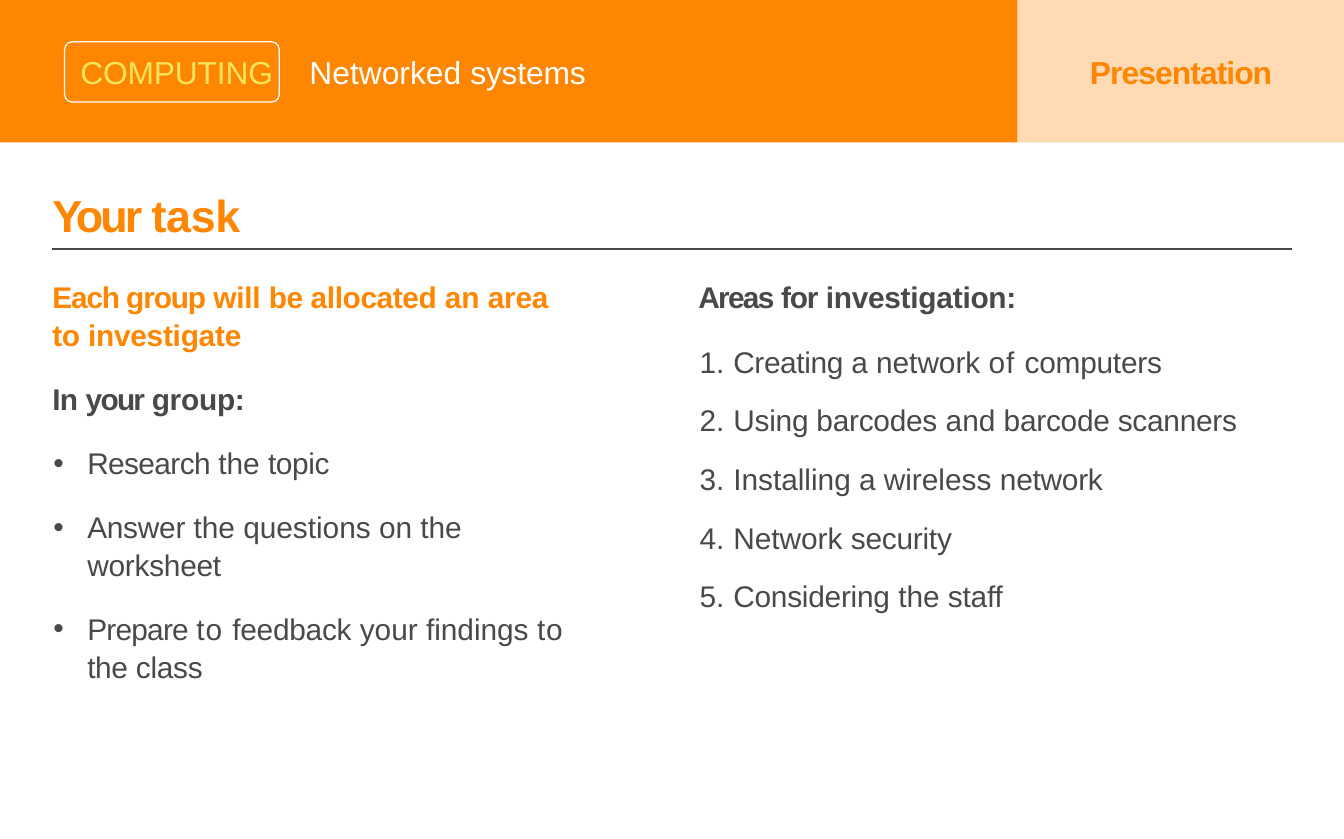
import pptx
import pptx.dml.color
import pptx.enum.shapes
import pptx.enum.text
import pptx.oxml
import pptx.oxml.ns
import pptx.util
from pptx.util import Cm

ORANGE, GREY, WHITE, YELLOW = "FF8600", "4A494A", "FFFFFF", "F2E55B"
SHAPE = pptx.enum.shapes.MSO_SHAPE


def color(value):
    """Return an RGB colour from a hex string."""
    return pptx.dml.color.RGBColor.from_string(value)


def add_xml(parent, tag, **attrs):
    """Append a DrawingML child element with attributes."""
    child = pptx.oxml.parse_xml(f"<a:{tag} {pptx.oxml.ns.nsdecls('a')}/>")
    for name, value in attrs.items():
        child.set(name, str(value))
    parent.append(child)
    return child


def add_panel(s, left, width, fill, alpha=None):
    """Add a band of the header, optionally translucent."""
    sp = s.shapes.add_shape(SHAPE.RECTANGLE, left, 0, width, Cm(2.69))
    sp.shadow.inherit = False
    sp.line.fill.background()
    sp.fill.solid()
    sp.fill.fore_color.rgb = color(fill)
    if alpha:
        clr = sp.fill._xPr.find(".//" + pptx.oxml.ns.qn("a:srgbClr"))
        add_xml(clr, "alpha", val=alpha * 1000)


def add_badge(s):
    """Add the rounded outline around the subject name."""
    sp = s.shapes.add_shape(SHAPE.ROUNDED_RECTANGLE, Cm(1.22), Cm(0.79), Cm(4.06), Cm(1.14))
    sp.adjustments[0] = 0.13
    sp.shadow.inherit = False
    sp.fill.background()
    sp.line.color.rgb = color(WHITE)
    sp.line.width = pptx.util.Pt(0.68)


def add_rule(s):
    """Add the line under the title."""
    line = s.shapes.add_connector(
        pptx.enum.shapes.MSO_CONNECTOR.STRAIGHT, Cm(0.99), Cm(4.7), Cm(24.41), Cm(4.7))
    line.line.color.rgb = color(GREY)
    line.line.width = pptx.util.Pt(1)
    add_xml(line._element.spPr, "effectLst")


def place(sp, left, top, width, height):
    """Position a text shape and clear its insets."""
    sp.left, sp.top, sp.width, sp.height = Cm(left), Cm(top), Cm(width), Cm(height)
    tf = sp.text_frame
    tf.margin_left = tf.margin_top = tf.margin_right = tf.margin_bottom = 0
    tf.word_wrap = True
    tf.auto_size = pptx.enum.text.MSO_AUTO_SIZE.NONE
    tf.vertical_anchor = pptx.enum.text.MSO_ANCHOR.TOP
    return tf


def write(p, runs, size, fill, bold=False, before=0, bullet=None, right=0):
    """Fill a paragraph with (text, letter spacing) runs."""
    pPr = p._p.get_or_add_pPr()
    pPr.set("marL", str(Cm(0.66) if bullet else 0))
    pPr.set("indent", str(Cm(-0.64) if bullet else 0))
    if right:
        pPr.set("marR", str(Cm(right)))
    if bullet:
        add_xml(pPr, "buFont", typeface="Arial")
    if bullet == "number":
        add_xml(pPr, "buAutoNum", type="arabicPeriod")
    elif bullet:
        add_xml(pPr, "buChar", char=bullet)
    else:
        add_xml(pPr, "buNone")
    p.alignment = pptx.enum.text.PP_ALIGN.LEFT
    p.space_before = pptx.util.Pt(before)
    font = p.font
    font.name, font.size, font.bold = "Arial", pptx.util.Pt(size), bold
    font.color.rgb = color(fill)
    for text, spacing in runs:
        r = p.add_run()
        r.text = text
        r._r.get_or_add_rPr().set("spc", str(round(spacing * 100)))


def add_label(s, left, width, runs, fill, bold=False):
    """Add a one-line header label."""
    tf = place(s.shapes.add_textbox(0, 0, 0, 0), left, 1, width, 0.8)
    write(tf.paragraphs[0], runs, 17, fill, bold)


def fill_column(sp, left, width, paragraphs):
    """Fill a body placeholder with formatted paragraphs."""
    tf = place(sp, left, 5.24, width, 6.8)
    for i, (runs, options) in enumerate(paragraphs):
        p = tf.add_paragraph() if i else tf.paragraphs[0]
        p.line_spacing = 1.05
        write(p, runs, 16, **{"fill": GREY, **options})


def main():
    """Build the slide and save it."""
    prs = pptx.Presentation()
    prs.slide_width, prs.slide_height = Cm(25.4), Cm(15.85)
    s = prs.slides.add_slide(prs.slide_layouts[3])
    title, tasks, areas = s.placeholders

    add_panel(s, Cm(19.23), Cm(6.17), ORANGE, alpha=30)
    add_panel(s, 0, Cm(19.23), ORANGE)
    add_badge(s)
    add_label(s, 1.52, 3.76, [("COMPUTING", -0.1)], YELLOW)
    add_label(s, 5.85, 5.6, [("Networked ", 0), ("systems", -0.1)], WHITE)
    add_label(s, 20.6, 3.8, [("Presentation", -0.5)], ORANGE, bold=True)

    tf = place(title, 0.99, 3.55, 8, 1.1)
    write(tf.paragraphs[0], [("Your ", -1.6), ("task", -0.2)], 24, ORANGE, bold=True)
    add_rule(s)

    dot = {"before": 14.2, "bullet": "•"}
    fill_column(tasks, 0.99, 10.64, [
        ([("Each group ", -0.6), ("will ", -0.1), ("be allocated ", -0.2), ("an ", 0),
          ("area ", -0.1), ("to ", -0.2), ("investigate", -0.1)],
         {"fill": ORANGE, "bold": True, "right": 0.8}),
        ([("In ", -0.4), ("your ", -0.9), ("group:", -0.1)], {"bold": True, "before": 14.2}),
        ([("Research ", -0.3), ("the ", 0), ("topic", -0.2)], dot),
        ([("Answer ", -0.1), ("the questions on the ", 0), ("worksheet", -0.1)],
         {**dot, "right": 0.8}),
        ([("Prepare ", -0.4), ("to ", 0.5), ("feedback ", -0.1), ("your findings ", 0),
          ("to ", 0.5), ("the ", -0.2), ("class", -0.1)], dot),
    ])

    number = {"before": 11.3, "bullet": "number"}
    fill_column(areas, 13.2, 10.5, [
        ([("Areas ", -0.9), ("for ", -0.6), ("investigation:", -0.1)], {"bold": True}),
        ([("Creating ", -0.2), ("a network ", 0), ("of ", 0.5), ("computers", -0.1)],
         {**number, "before": 14.2}),
        ([("Using barcodes ", -0.1), ("and ", 0), ("barcode scanners", -0.1)], number),
        ([("Installing a wireless ", 0), ("network", -0.1)], number),
        ([("Network ", 0), ("security", -0.1)], number),
        ([("Considering ", -0.1), ("the ", 0), ("staff", -0.1)], number),
    ])
    prs.save("out.pptx")


if __name__ == "__main__":
    main()
